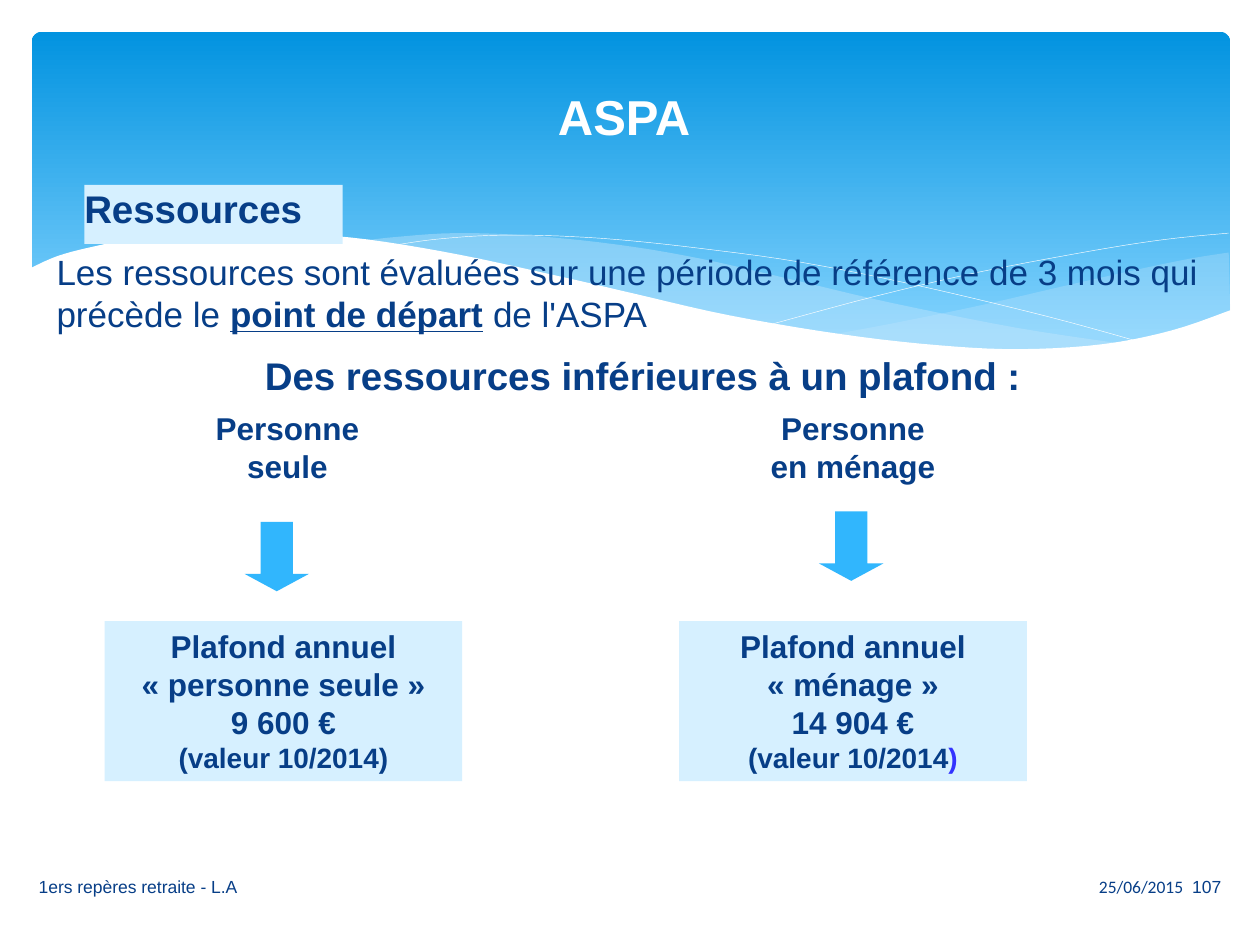
from pptx import Presentation
from pptx import util as u
from pptx.dml import color
from pptx.enum import shapes, text
from pptx.oxml.ns import qn
from lxml import etree

RGB = color.RGBColor
NAVY = RGB(0x07, 0x3E, 0x87)
VIOLET = RGB(0x33, 0x33, 0xFF)
WHITE = RGB(0xFF, 0xFF, 0xFF)
SKY_DARK = RGB(0x02, 0x93, 0xE0)
SKY_LIGHT = RGB(0x83, 0xD3, 0xFE)
MIST = RGB(0xC6, 0xE7, 0xFC)
PALE = RGB(0xD6, 0xF0, 0xFF)
ARROW = RGB(0x31, 0xB6, 0xFD)

SHAPE = shapes.MSO_SHAPE
ALIGN = text.PP_ALIGN
ANCHOR = text.MSO_ANCHOR

RIGHT_TOP = [(24.13, 4.45), (23.11, 4.62), (21.23, 5.03), (19.15, 5.51), (17.3, 5.89), (16.15, 6.1)]
RIGHT_BOTTOM = [(16.15, 6.1), (17.63, 6.27), (18.9, 6.4), (20.04, 6.43), (21.29, 6.35),
                (22.35, 6.2), (23.29, 5.94), (24.16, 5.64)]
MIDDLE_TOP = [(22.05, 6.3), (19.86, 5.97), (17.3, 5.46), (15.34, 5), (13.46, 4.57), (11.79, 4.29),
              (10.03, 4.11), (8.53, 4.06), (7.32, 4.14), (6.63, 4.22)]
MIDDLE_BOTTOM = [(6.63, 4.22), (8.05, 4.42), (9.63, 4.72), (10.77, 5), (12.83, 5.46), (14.63, 5.84),
                 (16.26, 6.12), (17.7, 6.32), (19, 6.4), (20.14, 6.43), (21.13, 6.4), (22.05, 6.3)]
FALLING_LINE = [(7.21, 4.32), (8.1, 4.19), (9.19, 4.11), (10.36, 4.11), (11.79, 4.19), (13.49, 4.37),
                (15.52, 4.65), (17.83, 5.11), (20.47, 5.74), (22.4, 6.27)]
RISING_LINE = [(14.94, 5.89), (17.02, 5.33), (19.08, 4.85), (21.36, 4.42), (22.83, 4.19), (24.13, 4.06)]
WHITE_EDGE = [(24.18, 5.61), (22.99, 6.02), (21.59, 6.3), (19.91, 6.4), (18.26, 6.32), (16.33, 6.1),
              (14.07, 5.72), (12.14, 5.28), (10.72, 4.95), (8.64, 4.5), (6.78, 4.19), (5.21, 4.06),
              (3.86, 4.04), (2.39, 4.11), (1.3, 4.32), (0.53, 4.52), (-0.05, 4.78)]


def smooth(pts, steps=5):
    ends = [pts[0]] + pts + [pts[-1]]
    curve = []
    for a, b, c, d in zip(ends, ends[1:], ends[2:], ends[3:]):
        for t in (i / steps for i in range(steps)):
            curve.append(tuple(
                (2 * q + (v - p) * t + (2 * p - 5 * q + 4 * v - w) * t ** 2
                 + (3 * q - p - 3 * v + w) * t ** 3) / 2
                for p, q, v, w in zip(a, b, c, d)))
    return curve + [pts[-1]]


def wave(s, left, top, pts, fill=None, alpha=None, line=None):
    pts = [(u.Cm(left + x), u.Cm(top + y)) for x, y in pts]
    fb = s.shapes.build_freeform(*pts[0])
    fb.add_line_segments(pts[1:], close=fill is not None)
    sp = fb.convert_to_shape()
    sp.shadow.inherit = False
    if fill is None:
        sp.fill.background()
    else:
        sp.fill.solid()
        sp.fill.fore_color.rgb = fill
    if alpha:
        clr = sp.fill._xPr.find(qn("a:solidFill"))[0]
        etree.SubElement(clr, qn("a:alpha"), val=str(alpha * 1000))
    if line is None:
        sp.line.fill.background()
    else:
        sp.line.color.rgb = line
        sp.line.width = u.Pt(0.25)


def block(s, kind, box, fill):
    sp = s.shapes.add_shape(kind, *map(u.Cm, box))
    sp.shadow.inherit = False
    sp.line.fill.background()
    sp.fill.solid()
    sp.fill.fore_color.rgb = fill
    return sp


def label(s, box):
    return s.shapes.add_textbox(*map(u.Cm, box))


def write(sp, runs, size, align=ALIGN.LEFT, anchor=ANCHOR.TOP, bold=False, font="Arial", color=NAVY):
    tf = sp.text_frame
    tf.word_wrap = True
    tf.auto_size = text.MSO_AUTO_SIZE.NONE
    tf.vertical_anchor = anchor
    p = tf.paragraphs[0]
    p.alignment = align
    for words, style in runs:
        for i, part in enumerate(words.split("\n")):
            if i:
                p.add_line_break()
            if part:
                r = p.add_run()
                r.text = part
                f = r.font
                f.name = font
                f.size = u.Pt(style.get("size", size))
                f.bold = style.get("bold", bold)
                f.underline = style.get("underline", False)
                f.color.rgb = style.get("color", color)
    return tf


def header(s, left, top, width, height):
    sp = block(s, SHAPE.ROUNDED_RECTANGLE, (left, top, width, height), SKY_DARK)
    sp.adjustments[0] = 0.03
    sp.fill.gradient()
    sp.fill.gradient_angle = 270
    for stop, (pos, rgb) in zip(sp.fill.gradient_stops, ((0, SKY_DARK), (0.9, SKY_LIGHT))):
        stop.position = pos
        stop.color.rgb = rgb
    wave(s, left, top, smooth(RIGHT_TOP) + smooth(RIGHT_BOTTOM), MIST, 29)
    wave(s, left, top, smooth(MIDDLE_TOP) + smooth(MIDDLE_BOTTOM), MIST, 40)
    for pts in (FALLING_LINE, RISING_LINE):
        wave(s, left, top, smooth(pts), line=WHITE)
    wave(s, left, top, smooth(WHITE_EDGE) + [(-0.05, 7.72), (24.18, 7.72)], WHITE)

    title = s.shapes.title
    title.element.getparent().append(title.element)
    title.left, title.top = u.Cm(left + 0.63), u.Cm(top + 0.3)
    title.width, title.height = u.Cm(22.86), u.Cm(2.79)
    write(title, [("ASPA ", {})], 28, ALIGN.CENTER, ANCHOR.MIDDLE, True, color=WHITE)


def resources(s, left, top, width):
    sp = block(s, SHAPE.RECTANGLE, (left + 0.81, top, 5.21, 1.19), PALE)
    tf = write(sp, [("Ressources", {})], 22, bold=True)
    tf.margin_left = tf.margin_right = tf.margin_top = tf.margin_bottom = 0
    write(label(s, (left, top + 1.19, width, 1.96)), [
        ("Les ressources sont évaluées sur une période de référence de 3 mois qui précède le ", {}),
        ("point de départ", {"bold": True, "underline": True}),
        (" de l'ASPA", {})], 20, anchor=ANCHOR.MIDDLE)
    write(label(s, (left + 1.07, top + 3.25, 22, 1.19)),
          [("Des ressources inférieures à un plafond :", {})], 22, ALIGN.CENTER, bold=True)


def ceiling(s, left, top, width, person, runs, label_left, arrow_top):
    write(label(s, (left + label_left, top, 7.01, 1.8)), [(person, {})], 18, ALIGN.CENTER, bold=True)
    sp = block(s, SHAPE.DOWN_ARROW, (left + 2.82, top + arrow_top, 1.3, 1.4), ARROW)
    sp.adjustments[0], sp.adjustments[1] = 0.5, 0.27
    card = block(s, SHAPE.RECTANGLE, (left, top + 4.39, width, 3.23), PALE)
    write(card, runs, 18, ALIGN.CENTER, bold=True)


def footer(s, left, top, width, height):
    for words, x, w, align, font in (
            ("1ers repères retraite - L.A", 0, 10.52, ALIGN.LEFT, "Arial"),
            ("25/06/2015", width - 10.52, 9.75, ALIGN.RIGHT, "Calibri"),
            ("107", width - 10.52, 10.52, ALIGN.RIGHT, "Arial")):
        write(label(s, (left + x, top, w, height)), [(words, {})], 10, align, ANCHOR.MIDDLE, font=font)


def main():
    prs = Presentation()
    prs.slide_width, prs.slide_height = u.Cm(25.4), u.Cm(19.05)
    s = prs.slides.add_slide(prs.slide_layouts[5])
    header(s, 0.64, 0.64, 24.16, 6.86)
    resources(s, 0.89, 3.73, 23.8)
    small = {"size": 16}
    ceiling(s, 2.11, 8.13, 7.21, "Personne\nseule",
            [("Plafond annuel\n« personne seule »\n9 600 €\n", {}), ("(valeur 10/2014)", small)],
            0.18, 2.39)
    ceiling(s, 13.69, 8.13, 7.01, "Personne\nen ménage",
            [("Plafond annuel\n« ménage »\n14 904 €\n", {}), ("(valeur 10/2014", small),
             (")", {"size": 16, "color": VIOLET})],
            0, 2.18)
    footer(s, 0.53, 17.37, 24.34, 1.02)
    prs.save("out.pptx")


if __name__ == "__main__":
    main()
